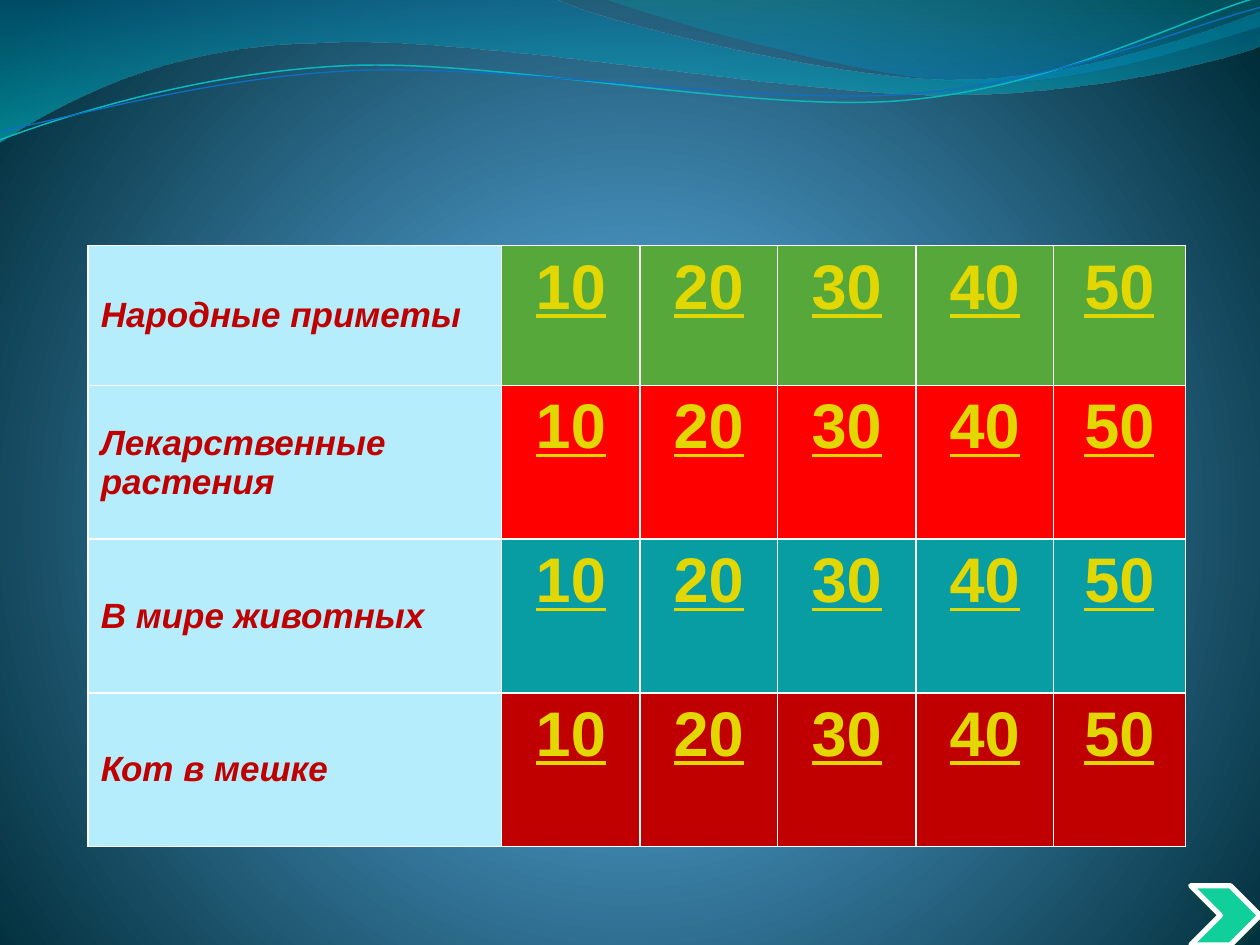
import math

import pptx
import pptx.dml.color
import pptx.enum.shapes
import pptx.enum.text
import pptx.oxml
import pptx.oxml.ns
import pptx.util

WIDTH, HEIGHT = 10, 7.5
CATEGORIES = [
    ("Народные приметы", "55A839"),
    ("Лекарственные растения", "FF0000"),
    ("В мире животных", "089CA3"),
    ("Кот в мешке", "C00000"),
]
SCORES = ["10", "20", "30", "40", "50"]
COLUMN_WIDTHS = [3.28, 1.1, 1.09, 1.1, 1.09, 1.05]
ROW_HEIGHTS = [1.11, 1.22, 1.22, 1.22]
TABLE_LEFT, TABLE_TOP = 0.7, 1.95

BACKGROUND_STOPS = [(0, "4AA0D6", 100), (25, "4C98C7", 100), (100, "002C38", 100)]
BACKGROUND_DIRECTION = (
    '<a:path path="circle"><a:fillToRect l="10000" t="110000" r="10000" b="100000"/></a:path>'
)
DOWNWARD = '<a:lin ang="5400000" scaled="1"/>'

WAVES = [
    ((0, -0.01), [
        [(4.4, -0.01)],
        [(4.76, 0.17), (6.64, 0.63), (7.58, 0.63)],
        [(8.53, 0.63), (9.58, 0.26), (10, 0.09)],
        [(10.01, 0.36)],
        [(9.83, 0.44), (8.7, 0.76), (7.46, 0.75)],
        [(6.22, 0.75), (3.82, 0.28), (2.57, 0.34)],
        [(1.29, 0.35), (0.46, 0.83), (-0.01, 1.13)],
    ], [(0, "0074A1", 45), (100, "00C6CF", 55)]),
    ((4.79, -0.01), [
        [(5.09, 0.11), (6.82, 0.62), (7.69, 0.65)],
        [(8.56, 0.69), (9.61, 0.32), (10, 0.21)],
        [(10, 0)],
    ], [(0, "00A1A9", 30), (80, "008BBF", 45)]),
]
STRAND_TILT = -2.7
STRANDS = [
    ((0, 1.11), [
        [(0.48, 0.93), (1.58, 0.57), (2.77, 0.52)],
        [(3.95, 0.47), (5.93, 0.89), (7.13, 0.8)],
        [(8.33, 0.71), (9.38, 0.15), (9.98, -0.02)],
    ], (4.99, 0.58), "0AB8BF", 0.85),
    ((0, 1.04), [
        [(0.47, 0.96), (1.64, 0.61), (2.83, 0.56)],
        [(4.03, 0.51), (5.97, 0.83), (7.17, 0.75)],
        [(8.36, 0.67), (9.41, 0.21), (10, 0.06)],
    ], (5, 0.59), "0F6FC6", 0.75),
]


def color(value):
    return pptx.dml.color.RGBColor.from_string(value)


def parse_xml(text):
    return pptx.oxml.parse_xml(text.replace(">", f" {pptx.oxml.ns.nsdecls('a')}>", 1))


def apply_gradient(fill, parent, stops, direction):
    fill.solid()
    marks = "".join(
        f'<a:gs pos="{position * 1000}"><a:srgbClr val="{value}">'
        f'<a:alpha val="{alpha * 1000}"/></a:srgbClr></a:gs>'
        for position, value, alpha in stops
    )
    solid = parent.find(pptx.oxml.ns.qn("a:solidFill"))
    parent.replace(solid, parse_xml(
        f"<a:gradFill><a:gsLst>{marks}</a:gsLst>{direction}</a:gradFill>"))


def turn(point, center, degrees):
    angle = math.radians(degrees)
    x, y = point[0] - center[0], point[1] - center[1]
    return (center[0] + x * math.cos(angle) - y * math.sin(angle),
            center[1] + x * math.sin(angle) + y * math.cos(angle))


def add_curve(slide, start, segments, close, center=(0, 0), tilt=0):
    points = [start, *(point for segment in segments for point in segment)]
    places = [tuple(map(pptx.util.Inches, turn(point, center, -tilt))) for point in points]
    builder = slide.shapes.build_freeform(*places[0])
    builder.add_line_segments(places[1:], close=close)
    shape = builder.convert_to_shape()
    shape.rotation = tilt
    shape.shadow.inherit = False

    lines = iter(list(shape.element.iter(pptx.oxml.ns.qn("a:lnTo"))))
    for segment in segments:
        group = [next(lines) for _ in segment]
        if len(group) == 3:
            curve = parse_xml("<a:cubicBezTo></a:cubicBezTo>")
            group[0].addprevious(curve)
            for line in group:
                curve.append(line[0])
                line.getparent().remove(line)
    return shape


def set_line(shape, value, width):
    shape.line.color.rgb = color(value)
    shape.line.width = pptx.util.Pt(width)


def add_borders(cell):
    properties = cell._tc.get_or_add_tcPr()
    for index, side in enumerate(("lnL", "lnR", "lnT", "lnB")):
        properties.insert(index, parse_xml(
            f'<a:{side} w="12700"><a:solidFill><a:srgbClr val="FFFFFF"/></a:solidFill></a:{side}>'))


def fill_cell(cell, text, fill, size, text_color, is_label):
    cell.text = text
    cell.fill.solid()
    cell.fill.fore_color.rgb = color(fill)
    add_borders(cell)
    paragraph = cell.text_frame.paragraphs[0]
    font = paragraph.runs[0].font
    font.name, font.size, font.bold = "Arial", pptx.util.Pt(size), True
    font.color.rgb = color(text_color)
    font.italic, font.underline = is_label, not is_label
    if is_label:
        cell.vertical_anchor = pptx.enum.text.MSO_ANCHOR.MIDDLE
    else:
        paragraph.alignment = pptx.enum.text.PP_ALIGN.CENTER


def add_score_table(slide):
    bounds = (TABLE_LEFT, TABLE_TOP, sum(COLUMN_WIDTHS), sum(ROW_HEIGHTS))
    table = slide.shapes.add_table(
        len(ROW_HEIGHTS), len(COLUMN_WIDTHS), *map(pptx.util.Inches, bounds)).table
    table.first_row = table.horz_banding = False
    for column, width in zip(table.columns, COLUMN_WIDTHS):
        column.width = pptx.util.Inches(width)
    for row, height, (category, fill) in zip(table.rows, ROW_HEIGHTS, CATEGORIES):
        row.height = pptx.util.Inches(height)
        label, *score_cells = row.cells
        fill_cell(label, category, "B5EDFD", 20, "C00000", True)
        for cell, score in zip(score_cells, SCORES):
            fill_cell(cell, score, fill, 36, "E2D700", False)


def add_next_arrow(slide, width=0.55, height=0.47):
    bounds = (WIDTH - width, HEIGHT - height, width, height)
    arrow = slide.shapes.add_shape(
        pptx.enum.shapes.MSO_SHAPE.CHEVRON, *map(pptx.util.Inches, bounds))
    arrow.fill.solid()
    arrow.fill.fore_color.rgb = color("10CF9B")
    set_line(arrow, "FFFFFF", 3)
    arrow.shadow.inherit = False
    effects = arrow.element.spPr.find(pptx.oxml.ns.qn("a:effectLst"))
    effects.append(parse_xml(
        '<a:outerShdw blurRad="57150" dist="38100" dir="5400000" rotWithShape="0">'
        '<a:srgbClr val="044A37"><a:alpha val="48000"/></a:srgbClr></a:outerShdw>'))


def main():
    presentation = pptx.Presentation()
    presentation.slide_width = pptx.util.Inches(WIDTH)
    presentation.slide_height = pptx.util.Inches(HEIGHT)
    slide = presentation.slides.add_slide(presentation.slide_layouts[6])

    background = slide.background.fill
    background.solid()
    properties = slide.element.find(".//" + pptx.oxml.ns.qn("p:bgPr"))
    apply_gradient(background, properties, BACKGROUND_STOPS, BACKGROUND_DIRECTION)

    for start, segments, stops in WAVES:
        wave = add_curve(slide, start, segments, True)
        apply_gradient(wave.fill, wave.element.spPr, stops, DOWNWARD)
        wave.line.fill.background()
    for start, segments, center, value, width in STRANDS:
        strand = add_curve(slide, start, segments, False, center, STRAND_TILT)
        strand.fill.background()
        set_line(strand, value, width)

    add_score_table(slide)
    add_next_arrow(slide)
    presentation.save("out.pptx")


if __name__ == "__main__":
    main()
